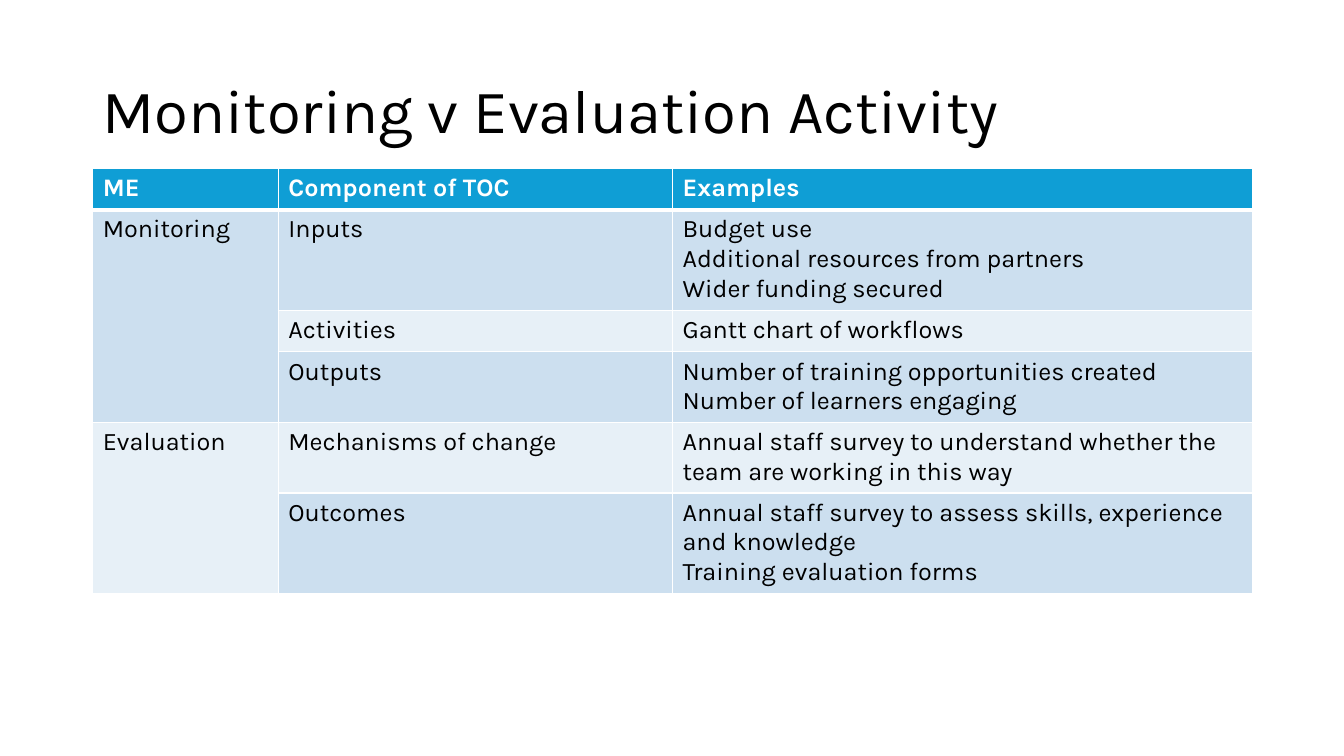
from dataclasses import dataclass

from lxml.etree import SubElement
from pptx import Presentation
from pptx.dml.color import RGBColor
from pptx.enum.text import MSO_ANCHOR
from pptx.oxml.ns import qn
from pptx.util import Inches, Pt


@dataclass(frozen=True)
class Theme:
    """Colours, font and type sizes of the slide."""
    font: str = "Karla"
    title: int = 44
    body: int = 18
    ink: str = "000000"
    white: str = "FFFFFF"
    head: str = "0F9ED5"
    bands: tuple = ("CCDFEF", "E7F0F7")
    thin: int = 1
    thick: int = 3


THEME = Theme()
TITLE = "Monitoring v Evaluation Activity"
HEADS = ("ME", "Component of TOC", "Examples")
GROUPS = (
    ("Monitoring", (
        ("Inputs", ("Budget use", "Additional resources from partners",
                    "Wider funding secured")),
        ("Activities", ("Gantt chart of workflows",)),
        ("Outputs", ("Number of training opportunities created",
                     "Number of learners engaging")),
    )),
    ("Evaluation", (
        ("Mechanisms of change", (
            "Annual staff survey to understand whether the team are working in this way",)),
        ("Outcomes", ("Annual staff survey to assess skills, experience and knowledge",
                      "Training evaluation forms")),
    )),
)
WIDTHS = (1.84, 3.91, 5.75)
HEIGHTS = (0.41, 1, 0.41, 0.7, 0.7, 0.98)


def write(frame, lines, size, color, bold=False):
    """Write one paragraph per line into a text frame."""
    for i, line in enumerate(lines):
        para = frame.add_paragraph() if i else frame.paragraphs[0]
        run = para.add_run()
        run.text = line
        font = run.font
        font.name, font.size, font.bold = THEME.font, Pt(size), bold
        font.color.rgb = RGBColor.from_string(color)


def edge(cell, side, width):
    """Draw a white border on one side of a cell."""
    props = cell._tc.get_or_add_tcPr()
    line = SubElement(props, qn(f"a:ln{side}"), w=str(Pt(width)))
    fill = SubElement(line, qn("a:solidFill"))
    SubElement(fill, qn("a:srgbClr"), val=THEME.white)


def style(cell, row, color):
    """Set the borders and fill of a cell, with a thick rule under the head."""
    rules = {"L": THEME.thin, "R": THEME.thin,
             "T": THEME.thick if row == 1 else THEME.thin,
             "B": THEME.thick if row == 0 else THEME.thin}
    for side, width in rules.items():
        edge(cell, side, width)
    cell.fill.solid()
    cell.fill.fore_color.rgb = RGBColor.from_string(color)


def add_title(slide, left, top, width, height):
    """Place the title in its box."""
    frame = slide.shapes.add_textbox(left, top, width, height).text_frame
    frame.word_wrap = True
    frame.vertical_anchor = MSO_ANCHOR.MIDDLE
    frame.paragraphs[0].line_spacing = 0.9
    write(frame, [TITLE], THEME.title, THEME.ink)


def add_grid(slide, left, top, width, height):
    """Place the table and merge the first column by group."""
    table = slide.shapes.add_table(
        len(HEIGHTS), len(WIDTHS), left, top, width, height).table
    for col, size in zip(table.columns, WIDTHS):
        col.width = Inches(size)
    for row, size in zip(table.rows, HEIGHTS):
        row.height = Inches(size)
    for col, text in enumerate(HEADS):
        cell = table.cell(0, col)
        style(cell, 0, THEME.head)
        write(cell.text_frame, [text], THEME.body, THEME.white, True)
    row = 1
    for name, parts in GROUPS:
        first = row
        for part, lines in parts:
            band = THEME.bands[(row - 1) % 2]
            for col, texts in enumerate(([name] if row == first else [], [part], lines)):
                cell = table.cell(row, col)
                style(cell, row, band)
                write(cell.text_frame, texts, THEME.body, THEME.ink)
            row += 1
        table.cell(first, 0).merge(table.cell(row - 1, 0))


def main():
    """Build the slide and save it."""
    deck = Presentation()
    deck.slide_width, deck.slide_height = Inches(13.33), Inches(7.5)
    slide = deck.slides.add_slide(deck.slide_layouts[6])
    left, width = Inches(0.92), Inches(sum(WIDTHS))
    add_title(slide, left, Inches(0.4), width, Inches(1.45))
    add_grid(slide, left, Inches(1.67), width, Inches(sum(HEIGHTS)))
    deck.save("out.pptx")


if __name__ == "__main__":
    main()
